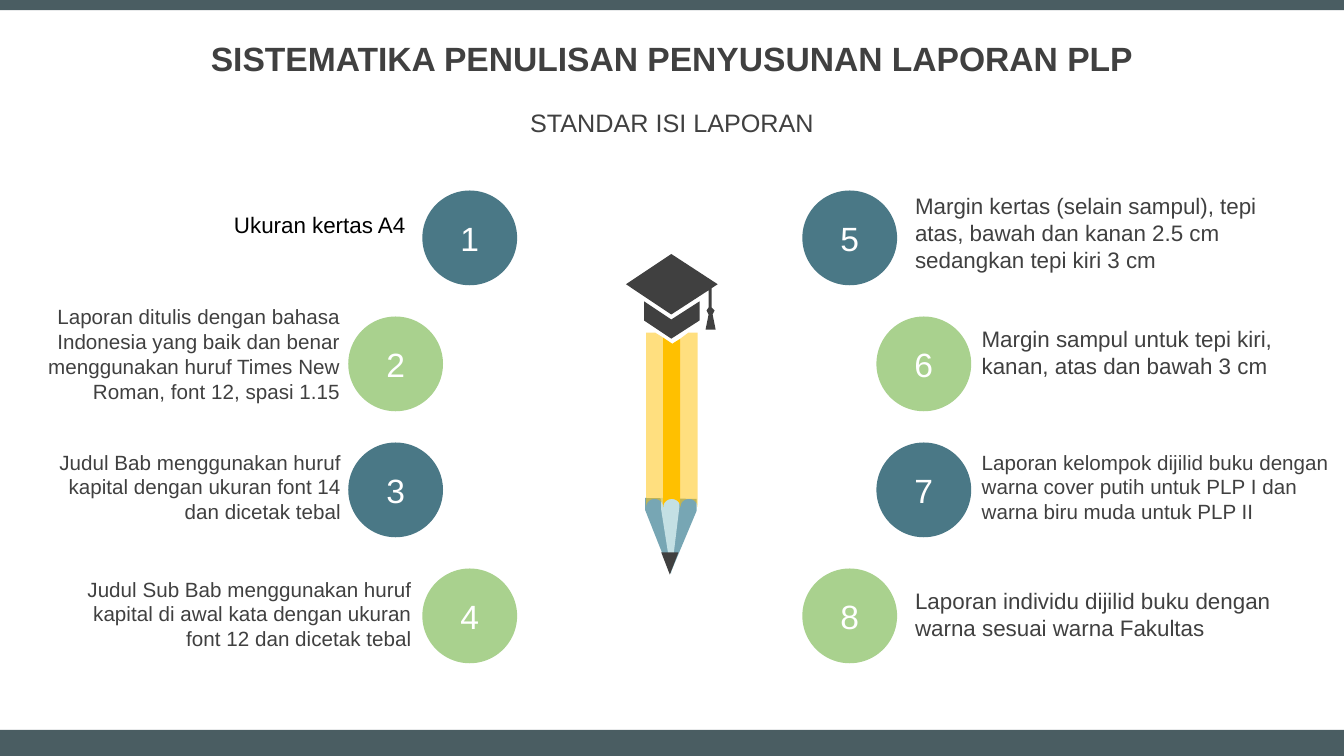
"""Build a slide of eight report-writing rules around a pencil."""
from math import cos, pi, sin

from lxml import etree
from pptx import Presentation
from pptx.dml.color import RGBColor
from pptx.enum.shapes import MSO_SHAPE
from pptx.enum.text import MSO_ANCHOR, MSO_AUTO_SIZE, PP_ALIGN
from pptx.oxml.ns import qn
from pptx.util import Inches, Pt

RECTANGLE, OVAL = MSO_SHAPE.RECTANGLE, MSO_SHAPE.OVAL
TRIANGLE = MSO_SHAPE.ISOSCELES_TRIANGLE
LEFT, CENTER, RIGHT = PP_ALIGN.LEFT, PP_ALIGN.CENTER, PP_ALIGN.RIGHT
TOP, MIDDLE = MSO_ANCHOR.TOP, MSO_ANCHOR.MIDDLE
GROW, FIXED = MSO_AUTO_SIZE.SHAPE_TO_FIT_TEXT, MSO_AUTO_SIZE.NONE

CELL = Inches(0.1)
COLUMNS, ROWS = 133.33, 75
AXIS, FIRST_ROW, ROW_STEP, DIAMETER = 65.45, 23.6, 12.5, 9.4
OUTER, INNER = 18.85, 26.2

COLORS = {
    "frame": "4A5D62", "dark": "404040", "black": "000000", "white": "FFFFFF",
    "teal": "4A7886", "green": "A9D18E", "yellow": "FFC000",
    "wood": "77A6B4", "light wood": "C4E0E4",
}
STYLES = {
    "title": {"size": Pt(24), "bold": True},
    "subtitle": {"size": Pt(18)},
    "number": {"size": Pt(24)},
    "large": {"size": Pt(16)},
    "small": {"size": Pt(14.7)},
}
HEADING = {"alignment": CENTER, "line_spacing": 0.9, "space_before": Pt(10)}

RULES = [
    ("Ukuran kertas A4", "large", "black", (13.1, 20.5, 28.1, 3.7)),
    ("Laporan ditulis dengan bahasa Indonesia yang baik dan benar menggunakan "
     "huruf Times New Roman, font 12, spasi 1.15",
     "small", "dark", (2.2, 29.7, 32.5, 10.9)),
    ("Judul Bab menggunakan huruf kapital dengan ukuran font 14 dan dicetak tebal",
     "small", "dark", (4.1, 44.1, 30.7, 8.4)),
    ("Judul Sub Bab menggunakan huruf kapital di awal kata dengan ukuran font 12 "
     "dan dicetak tebal", "small", "dark", (7.1, 56.7, 34.7, 8.4)),
    ("Margin kertas (selain sampul), tepi atas, bawah dan kanan 2.5 cm sedangkan "
     "tepi kiri 3 cm", "large", "dark", (89.8, 18.6, 38, 9.1)),
    ("Margin sampul untuk tepi kiri, kanan, atas dan bawah 3 cm",
     "large", "dark", (96.4, 31.8, 31.4, 6.4)),
    ("Laporan kelompok dijilid buku dengan warna cover putih untuk PLP I dan "
     "warna biru muda untuk PLP II", "small", "dark", (96.4, 44.1, 36.9, 8.4)),
    ("Laporan individu dijilid buku dengan warna sesuai warna Fakultas",
     "large", "dark", (89.8, 57.8, 40.4, 6.4)),
]

WOOD = [(64, 49.4), (69.1, 49.5), (69.1, 50.7), (66.5, 56.9), (64, 50.6)]
LIGHT_WOOD = [(65.6, 49.4), (67.4, 49.4), (67.4, 50.3), (66.6, 56.9), (65.6, 50.6)]
BANDS = [
    ([(64.1, 33), (65, 33), (65.8, 33.5)], 50),
    ([(65.8, 33.5), (66.7, 34.1), (67.5, 33.6)], 100),
    ([(67.5, 33.6), (68.3, 33), (69.2, 33)], 50),
]
CAP_BASE = [(63.9, 29.9), (66.6, 31.7), (69.4, 29.9), (69.4, 31.8), (66.6, 33.6),
            (63.9, 31.8)]
CAP_BOARD = [(66.6, 25.2), (71.2, 28.2), (70.6, 28.6), (70.6, 30.5), (70.9, 30.8),
             (70.7, 31.2), (71, 32.7), (70, 32.7), (70.3, 31.2), (70.1, 30.8),
             (70.3, 30.5), (70.3, 28.8), (66.6, 31.2), (62.1, 28.2)]


def cells(values):
    """Turn grid positions into whole slide units."""
    return [round(value * CELL) for value in values]


def apply(target, values):
    """Set each named attribute on the target."""
    for name, value in values.items():
        setattr(target, name, value)


def paint(shape, color, opacity=100):
    """Give a shape a plain fill, without line or shadow."""
    shape.shadow.inherit = False
    shape.line.fill.background()
    shape.fill.solid()
    shape.fill.fore_color.rgb = RGBColor.from_string(COLORS[color])
    if opacity < 100:
        tone = shape.fill._xPr.find(".//" + qn("a:srgbClr"))
        etree.SubElement(tone, qn("a:alpha"), val=str(opacity * 1000))


def write(shape, text, style, color, paragraph, anchor=MIDDLE, fit=FIXED):
    """Put one formatted paragraph into a shape."""
    frame = shape.text_frame
    apply(frame, {"word_wrap": True, "vertical_anchor": anchor, "auto_size": fit})
    para = frame.paragraphs[0]
    apply(para, paragraph)
    span = para.add_run()
    span.text = text
    apply(span.font, {"name": "Arial", **STYLES[style]})
    span.font.color.rgb = RGBColor.from_string(COLORS[color])


def add_block(page, kind, place, color):
    """Add a filled preset shape."""
    shape = page.shapes.add_shape(kind, *cells(place))
    paint(shape, color)
    return shape


def add_text(page, place, *content, **options):
    """Add a text box with one paragraph."""
    write(page.shapes.add_textbox(*cells(place)), *content, **options)


def add_outline(page, contours, color, opacity=100):
    """Add one free outline made of closed contours."""
    first, *others = [[cells(point) for point in contour] for contour in contours]
    builder = page.shapes.build_freeform(*first[0], scale=1.0)
    builder.add_line_segments(first[1:], close=True)
    for contour in others:
        builder.move_to(*contour[0])
        builder.add_line_segments(contour[1:], close=True)
    paint(builder.convert_to_shape(), color, opacity)


def scallop(left, right, base=50.3, height=0.8, steps=16):
    """Return the points of a half ellipse, from right to left."""
    middle, radius = (left + right) / 2, (right - left) / 2
    angles = [pi * step / steps for step in range(steps + 1)]
    return [(middle + radius * cos(angle), base - height * sin(angle))
            for angle in angles]


def add_rule(page, index, text, style, color, place):
    """Add a numbered circle and its rule."""
    side, row = divmod(index, 4)
    offset = OUTER if row in (0, 3) else INNER
    center = AXIS + (offset if side else -offset)
    corner = (center - DIAMETER / 2, FIRST_ROW + row * ROW_STEP - DIAMETER / 2)
    circle = add_block(page, OVAL, (*corner, DIAMETER, DIAMETER),
                       "green" if row % 2 else "teal")
    write(circle, str(index + 1), "number", "white", {"alignment": CENTER})
    add_text(page, place, text, style, color,
             {"alignment": LEFT if side else RIGHT}, anchor=TOP, fit=GROW)


def add_pencil(page):
    """Add the pencil with its graduation cap."""
    add_outline(page, [WOOD], "wood")
    add_outline(page, [LIGHT_WOOD], "light wood")
    for edge, opacity in BANDS:
        curve = scallop(edge[0][0], edge[-1][0])
        add_outline(page, [edge + curve], "yellow", opacity)
    tip = add_block(page, TRIANGLE, (65.6, 54.8, 1.7, 2.2), "dark")
    tip.rotation = 180
    add_outline(page, [CAP_BASE, CAP_BOARD], "dark")


def main():
    """Build and save the deck."""
    deck = Presentation()
    deck.slide_width, deck.slide_height = cells((COLUMNS, ROWS))
    page = deck.slides.add_slide(deck.slide_layouts[6])
    add_block(page, RECTANGLE, (0, 72.4, COLUMNS, 2.6), "frame")
    add_block(page, RECTANGLE, (0, 0, COLUMNS, 1), "frame")
    add_text(page, (0, 1.8, COLUMNS, 8.4),
             "SISTEMATIKA PENULISAN PENYUSUNAN LAPORAN PLP", "title", "dark", HEADING)
    add_text(page, (0, 10.2, COLUMNS, 4.2), "STANDAR ISI LAPORAN",
             "subtitle", "dark", HEADING)
    for index, rule in enumerate(RULES):
        add_rule(page, index, *rule)
    add_pencil(page)
    deck.save("out.pptx")


if __name__ == "__main__":
    main()
